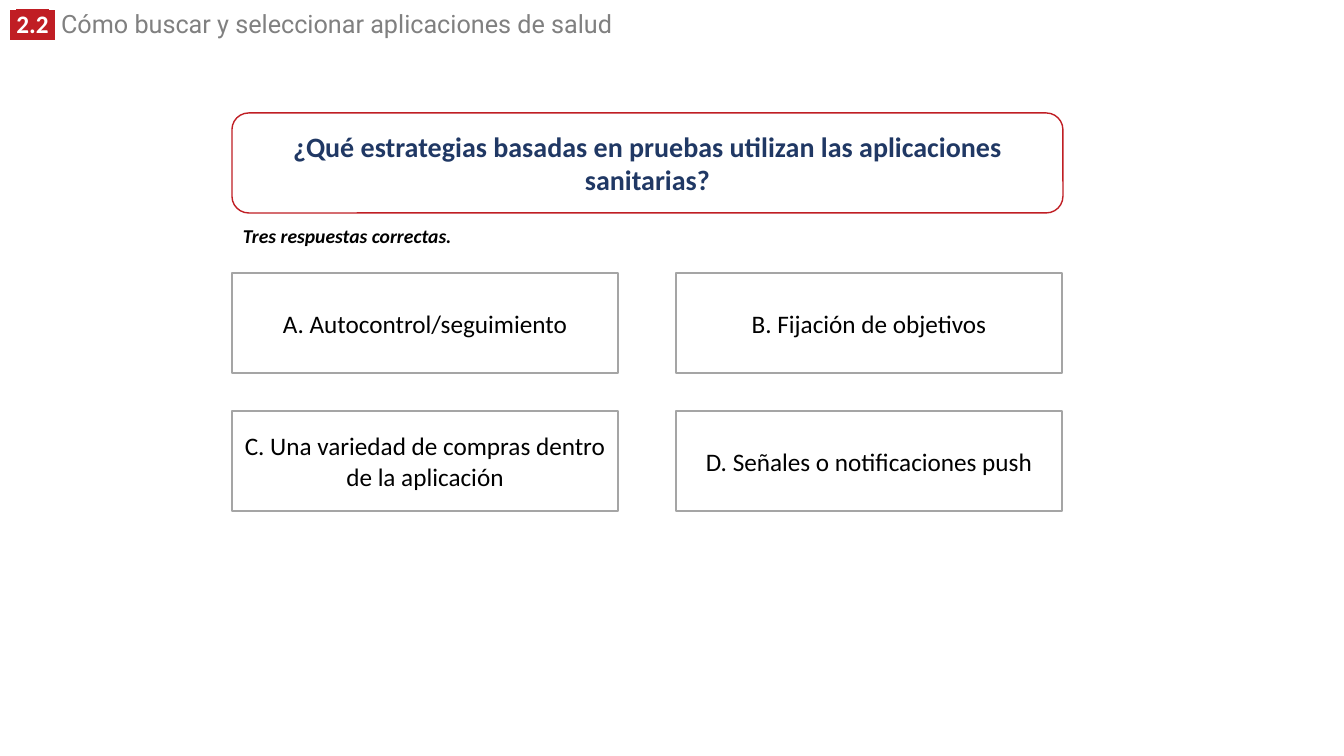
import pptx
import pptx.util
import pptx.dml.color
import pptx.enum.shapes
import pptx.enum.text
import pptx.oxml
import pptx.oxml.ns

SCALE = 914400 / 100.8  # EMU per px
THEME = {
    "red": "C01E24", "navy": "203864", "gray": "808080", "edge": "A5A5A5",
    "white": "FFFFFF", "black": "000000",
    "head": 18, "ask": 20, "hint": 14, "reply": 18,
    "font": "Calibri", "title": "Roboto",
}
SHAPE = pptx.enum.shapes.MSO_SHAPE
ALIGN = pptx.enum.text.PP_ALIGN
MIDDLE = pptx.enum.text.MSO_ANCHOR.MIDDLE
SIZE = pptx.enum.text.MSO_AUTO_SIZE


def style(font, size, color, bold=False, name="font"):
    font.size = pptx.util.Pt(THEME[size])
    font.color.rgb = pptx.dml.color.RGBColor.from_string(THEME[color])
    font.bold = bold
    font.name = THEME[name]


def add_box(kind, box, text, edge, size, color, bold=False):
    shape = slide.shapes.add_shape(kind, *[round(n * SCALE) for n in box])
    shape.shadow.inherit = False
    shape.fill.solid()
    shape.fill.fore_color.rgb = pptx.dml.color.RGBColor.from_string(THEME["white"])
    shape.line.color.rgb = pptx.dml.color.RGBColor.from_string(THEME[edge])
    shape.line.width = pptx.util.Pt(1)
    frame = shape.text_frame
    frame.text = text
    frame.word_wrap = True
    frame.vertical_anchor = MIDDLE
    para = frame.paragraphs[0]
    para.alignment = ALIGN.CENTER
    style(para.runs[0].font, size, color, bold)


deck = pptx.Presentation()
deck.slide_width = round(1344 * SCALE)
deck.slide_height = round(756 * SCALE)
slide = deck.slides.add_slide(deck.slide_layouts[5])

# Title with its number on a red highlight
title = slide.shapes.title
title.left, title.top, title.width, title.height = [
    round(n * SCALE) for n in (0, 9, 960, 35)]
frame = title.text_frame
frame.auto_size = SIZE.NONE
frame.vertical_anchor = pptx.enum.text.MSO_ANCHOR.TOP
para = frame.paragraphs[0]
para.alignment = ALIGN.LEFT
para.line_spacing = 0.8
for text, name, color, mark in [
    (" ", "title", "white", True),
    ("2.2", "font", "white", True),
    (" ", "title", "white", True),
    (" Cómo buscar y seleccionar aplicaciones de salud", "title", "gray", False),
]:
    run = para.add_run()
    run.text = text
    style(run.font, "head", color, mark, name)
    if mark:
        glow = pptx.oxml.parse_xml(
            f'<a:highlight {pptx.oxml.ns.nsdecls("a")}>'
            f'<a:srgbClr val="{THEME["red"]}"/></a:highlight>')
        fill = run._r.get_or_add_rPr().find(pptx.oxml.ns.qn("a:solidFill"))
        fill.addnext(glow)

# Question
add_box(SHAPE.ROUNDED_RECTANGLE, (232, 113, 831, 100),
        "¿Qué estrategias basadas en pruebas utilizan las aplicaciones sanitarias?",
        "red", "ask", "navy", True)

# Hint
hint = slide.shapes.add_textbox(*[round(n * SCALE) for n in (233, 219, 238, 34)])
hint.text_frame.text = "Tres respuestas correctas."
hint.text_frame.word_wrap = False
hint.text_frame.auto_size = SIZE.SHAPE_TO_FIT_TEXT
font = hint.text_frame.paragraphs[0].runs[0].font
style(font, "hint", "black", True)
font.italic = True

# Answers in a two by two grid
replies = [
    "A. Autocontrol/seguimiento",
    "B. Fijación de objetivos",
    "C. Una variedad de compras dentro de la aplicación",
    "D. Señales o notificaciones push",
]
for i, text in enumerate(replies):
    row, col = divmod(i, 2)
    add_box(SHAPE.RECTANGLE, (232 + 444 * col, 273 + 138 * row, 386, 100),
            text, "edge", "reply", "black")

deck.save("out.pptx")
